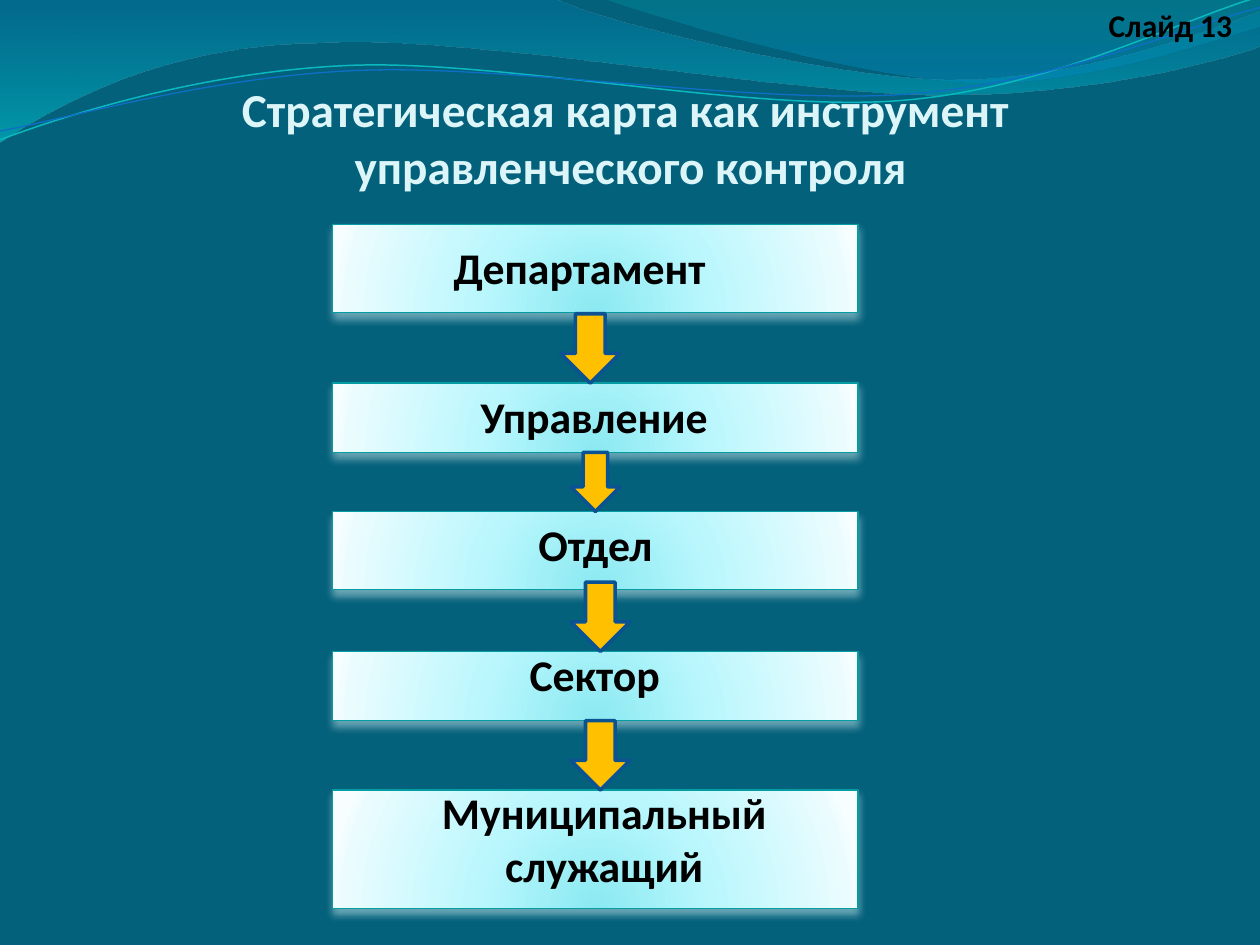
import math

import pptx
import pptx.util
import pptx.dml.color
import pptx.enum.shapes
import pptx.enum.text
import pptx.oxml
import pptx.oxml.ns

Inches, Pt = pptx.util.Inches, pptx.util.Pt
qn = pptx.oxml.ns.qn
PRESET = pptx.enum.shapes.MSO_SHAPE
ANCHOR = pptx.enum.text.MSO_ANCHOR
ALIGN = pptx.enum.text.PP_ALIGN
FIT = pptx.enum.text.MSO_AUTO_SIZE
NS = pptx.oxml.ns.nsdecls("a")
FONT = "Calibri"

BOX_LEFT, BOX_WIDTH = 2.64, 4.17
BOX_STOPS = [(0, "8BE9F1", 100), (43, "B9F7FD", 100),
             (93, "EAFCFE", 100), (100, "F8FEFF", 100)]
RADIAL = '<a:path path="circle"><a:fillToRect l="50000" t="130000" r="50000" b="-30000"/></a:path>'
DOWNWARD = '<a:lin ang="5400000" scaled="1"/>'

# Level: top, height of the box, then label text and its area
LEVELS = [
    (1.78, 0.70, "Департамент", (3.43, 1.86, 2.34, 0.52)),
    (3.04, 0.55, "Управление", (3.27, 3.04, 2.89, 0.52)),
    (4.06, 0.62, "Отдел", (4.06, 4.06, 1.33, 0.52)),
    (5.17, 0.55, "Сектор", (3.82, 5.09, 1.80, 0.52)),
    (6.27, 0.94, "Муниципальный служащий", (2.72, 6.19, 4.15, 0.94)),
]
ARROWS = [(4.45, 2.49, 0.47, 0.55), (4.53, 3.59, 0.39, 0.47),
          (4.53, 4.62, 0.47, 0.55), (4.53, 5.72, 0.47, 0.55)]

# Waves: a start point, then line ends (2 numbers) or Bezier curves (6 numbers)
WIDE_WAVE = [(0, -0.01), (4.4, -0.01), (4.76, 0.17, 6.64, 0.63, 7.58, 0.63),
             (8.53, 0.63, 9.58, 0.26, 10, 0.09), (10.01, 0.36),
             (9.83, 0.44, 8.7, 0.76, 7.46, 0.75), (6.22, 0.75, 3.82, 0.28, 2.57, 0.34),
             (1.29, 0.35, 0.46, 0.83, -0.01, 1.13)]
RIGHT_WAVE = [(4.79, -0.01), (5.09, 0.11, 6.82, 0.62, 7.69, 0.65),
              (8.56, 0.69, 9.61, 0.32, 10, 0.21), (10, 0)]
TEAL_LINE = [(0, 1.11), (0.48, 0.93, 1.58, 0.57, 2.77, 0.52),
             (3.95, 0.47, 5.93, 0.89, 7.13, 0.8), (8.33, 0.71, 9.38, 0.15, 9.98, -0.02)]
BLUE_LINE = [(0, 1.04), (0.47, 0.96, 1.64, 0.61, 2.83, 0.56),
             (4.03, 0.51, 5.97, 0.83, 7.17, 0.75), (8.36, 0.67, 9.41, 0.21, 10, 0.06)]
LINE_TILT = -2.7


def color(hex_value):
    return pptx.dml.color.RGBColor.from_string(hex_value)


def set_line(shape, hex_value, width):
    shape.line.color.rgb = color(hex_value)
    shape.line.width = Pt(width)


def set_gradient(shape, stops, direction):
    """Fill with stops of (position %, colour, opacity %)."""
    shape.fill.gradient()
    stop_xml = "".join(
        f'<a:gs pos="{pos * 1000}"><a:srgbClr val="{hex_value}">'
        f'<a:alpha val="{opacity * 1000}"/></a:srgbClr></a:gs>'
        for pos, hex_value, opacity in stops)
    gradient = pptx.oxml.parse_xml(
        f'<a:gradFill {NS} rotWithShape="1"><a:gsLst>{stop_xml}</a:gsLst>{direction}</a:gradFill>')
    properties = shape._element.spPr
    properties.replace(properties.find(qn("a:gradFill")), gradient)


def add_shadow(shape):
    shadow = pptx.oxml.parse_xml(
        f'<a:outerShdw {NS} blurRad="{Pt(4.5)}" dist="{Pt(3)}" dir="5400000" rotWithShape="0">'
        '<a:srgbClr val="D9F3F6"><a:alpha val="48000"/></a:srgbClr></a:outerShdw>')
    shape._element.spPr.find(qn("a:effectLst")).append(shadow)


def add_run(paragraph, text, size, hex_value):
    run = paragraph.add_run()
    run.text = text
    run.font.name, run.font.size, run.font.bold = FONT, Pt(size), True
    run.font.color.rgb = color(hex_value)


def add_label(slide, text, area, size, align):
    label = slide.shapes.add_textbox(*map(Inches, area))
    frame = label.text_frame
    frame.word_wrap = True
    frame.auto_size = FIT.SHAPE_TO_FIT_TEXT
    frame.paragraphs[0].alignment = align
    add_run(frame.paragraphs[0], text, size, "000000")


def turn(point, degrees, center=(5, 0.58)):
    angle = math.radians(degrees)
    dx, dy = point[0] - center[0], point[1] - center[1]
    return (center[0] + dx * math.cos(angle) - dy * math.sin(angle),
            center[1] + dx * math.sin(angle) + dy * math.cos(angle))


def add_curve(shapes, segments, close, tilt=0):
    """Draw the control points as lines, then join each curve's three into a Bezier."""
    points = [turn(segment[i:i + 2], -tilt)
              for segment in segments for i in range(0, len(segment), 2)]
    start, *rest = [(Inches(x), Inches(y)) for x, y in points]
    builder = shapes.build_freeform(*start)
    builder.add_line_segments(rest, close=close)
    curve = builder.convert_to_shape()
    lines = iter(list(curve._element.spPr.iter(qn("a:lnTo"))))
    for segment in segments[1:]:
        first = next(lines)
        if len(segment) == 6:
            bezier = pptx.oxml.parse_xml(f"<a:cubicBezTo {NS}/>")
            first.addprevious(bezier)
            for line in (first, next(lines), next(lines)):
                bezier.append(line[0])
                line.getparent().remove(line)
    curve.rotation = tilt
    curve.shadow.inherit = False
    return curve


def add_waves(slide):
    for segments, stops in (
            (WIDE_WAVE, [(0, "0074A1", 45), (100, "00C6CF", 55)]),
            (RIGHT_WAVE, [(0, "00A1A9", 30), (80, "008BBF", 45)])):
        wave = add_curve(slide.shapes, segments, True)
        set_gradient(wave, stops, DOWNWARD)
        wave.line.fill.background()
    threads = slide.shapes.add_group_shape()
    for segments, hex_value, width in ((TEAL_LINE, "0AB8BF", 0.85), (BLUE_LINE, "0F6FC6", 0.75)):
        thread = add_curve(threads.shapes, segments, False, LINE_TILT)
        thread.fill.background()
        set_line(thread, hex_value, width)


def place_title(slide, left, top, width, height):
    title = slide.shapes.title
    title.left, title.top, title.width, title.height = map(Inches, (left, top, width, height))
    frame = title.text_frame
    frame.auto_size = FIT.NONE
    frame.word_wrap = True
    frame.vertical_anchor = ANCHOR.BOTTOM
    frame.margin_left = frame.margin_right = frame.margin_bottom = 0
    frame.margin_top = Inches(0.05)
    paragraph = frame.paragraphs[0]
    paragraph.alignment = ALIGN.CENTER
    add_run(paragraph, "Стратегическая карта как инструмент ", 27, "DBF5F9")
    paragraph.add_line_break()
    add_run(paragraph, "управленческого контроля", 27, "DBF5F9")


def add_level(slide, top, height, text, label_area):
    box = slide.shapes.add_shape(
        PRESET.RECTANGLE, *map(Inches, (BOX_LEFT, top, BOX_WIDTH, height)))
    box.shadow.inherit = False
    set_gradient(box, BOX_STOPS, RADIAL)
    set_line(box, "069CA3", 0.75)
    add_shadow(box)
    add_label(slide, text, label_area, 25, ALIGN.CENTER)


def add_arrow(slide, area):
    arrow = slide.shapes.add_shape(PRESET.DOWN_ARROW, *map(Inches, area))
    arrow.shadow.inherit = False
    arrow.fill.solid()
    arrow.fill.fore_color.rgb = color("FFC000")
    set_line(arrow, "0B5292", 2)


def main():
    deck = pptx.Presentation()
    deck.slide_width, deck.slide_height = Inches(10), Inches(7.5)
    slide = deck.slides.add_slide(deck.slide_layouts[5])
    slide.background.fill.solid()
    slide.background.fill.fore_color.rgb = color("04617B")

    add_waves(slide)
    place_title(slide, 0.2, 0.6, 9.61, 0.94)
    # Chain of levels, top to bottom
    for level in LEVELS:
        add_level(slide, *level)
    for area in ARROWS:
        add_arrow(slide, area)
    # Slide number in the corner
    add_label(slide, "Слайд 13", (8.7, 0, 1.3, 0.4), 18, ALIGN.LEFT)
    deck.save("out.pptx")


if __name__ == "__main__":
    main()
